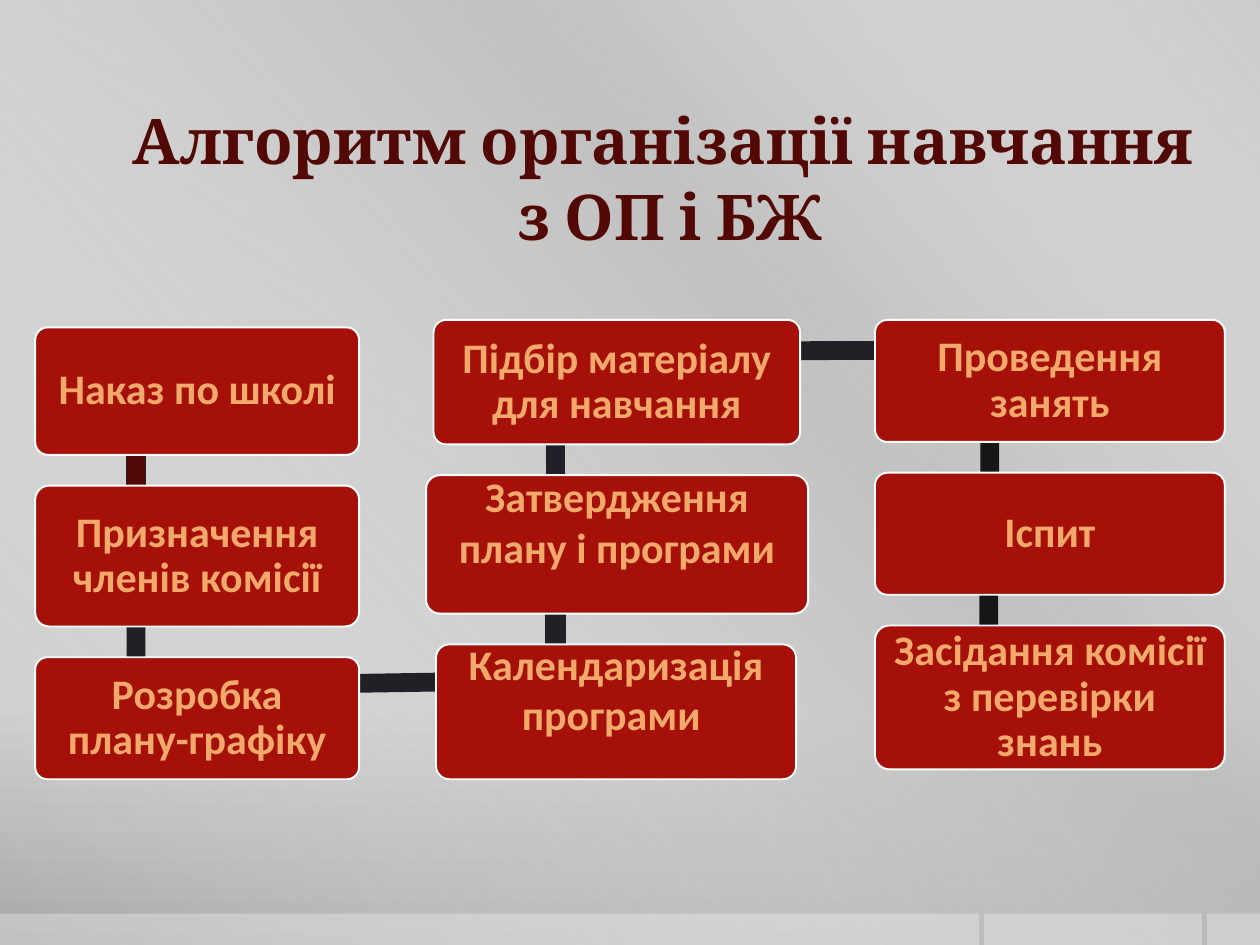
from lxml import etree
from pptx import Presentation
from pptx.dml.color import RGBColor
from pptx.enum.shapes import MSO_SHAPE as SHAPE
from pptx.enum.text import MSO_ANCHOR as ANCHOR, PP_ALIGN as ALIGN
from pptx.oxml.ns import qn
from pptx.util import Cm, Pt

WHITE = RGBColor(0xFF, 0xFF, 0xFF)
RED = RGBColor(0xA5, 0x10, 0x09)
MAROON = RGBColor(0x52, 0x08, 0x04)
PEACH = RGBColor(0xF2, 0xA9, 0x6B)
SLATE = RGBColor(0x20, 0x20, 0x26)
BLACK = RGBColor(0x16, 0x16, 0x16)
LIGHT = RGBColor(0xCB, 0xCB, 0xCB)
PALE = RGBColor(0xC8, 0xC8, 0xC8)
GREY = RGBColor(0xA7, 0xA7, 0xA7)
SILVER = RGBColor(0xBF, 0xBF, 0xBF)


def blend(fill, root, angle, stops):
    """Give fill a linear gradient of (percent, colour, opacity) stops."""
    fill.gradient()
    grad = next(root.iter(qn("a:gradFill")))
    group = grad.find(qn("a:gsLst"))
    for old in list(group):
        group.remove(old)
    for pos, color, alpha in stops:
        stop = etree.SubElement(group, qn("a:gs"), pos=str(pos * 1000))
        tone = etree.SubElement(stop, qn("a:srgbClr"), val=str(color))
        etree.SubElement(tone, qn("a:alpha"), val=str(alpha * 1000))
    grad.find(qn("a:lin")).set("ang", str(angle * 60000))


def draw(kind, left, top, width, height, color=None, edge=None, weight=0.75):
    shape = slide.shapes.add_shape(kind, Cm(left), Cm(top), Cm(width), Cm(height))
    shape.shadow.inherit = False
    if color is not None:
        shape.fill.solid()
        shape.fill.fore_color.rgb = color
    if edge is None:
        shape.line.fill.background()
    else:
        shape.line.color.rgb = edge
        shape.line.width = Pt(weight)
    return shape


deck = Presentation()
deck.slide_width, deck.slide_height = Cm(25.4), Cm(19.05)
slide = deck.slides.add_slide(deck.slide_layouts[6])

# Backdrop
blend(slide.background.fill, slide.element, 90,
      [(0, LIGHT, 100), (76, PALE, 100), (100, GREY, 100)])
sheen = draw(SHAPE.RECTANGLE, 0, 0, 25.4, 19.05)
blend(sheen.fill, sheen.element, 140,
      [(0, WHITE, 0), (34, SILVER, 61), (38, SILVER, 76), (100, WHITE, 0)])
for left, width in [(24.33, 1.07), (19.84, 4.39), (0, 19.74)]:
    strip = draw(SHAPE.RECTANGLE, left, 18.42, width, 0.63, WHITE)
    tone = next(strip.element.iter(qn("a:srgbClr")))
    etree.SubElement(tone, qn("a:alpha"), val="30000")

# Links behind the steps: centre x, centre y, length, rotation, fill, outline
links = [
    (2.74, 8.93, 3.3, 90, MAROON, SLATE),
    (2.74, 12.23, 3.25, 90, SLATE, None),
    (6.99, 13.78, 8.43, 359.1, SLATE, None),
    (11.2, 12.03, 3.35, 270, SLATE, SLATE),
    (11.2, 8.72, 3.25, 270, SLATE, None),
    (15.57, 7.07, 8.69, 359.9, SLATE, None),
    (19.95, 8.6, 3.07, 90, BLACK, None),
    (19.93, 11.8, 3.28, 90, BLACK, None),
]
THICK = 0.38
for x, y, length, turn, color, edge in links:
    bar = draw(SHAPE.RECTANGLE, x - length / 2, y - THICK / 2, length, THICK, color, edge)
    bar.rotation = turn

# Steps by column, top down: left, width, height, wording, text set high
GAP = 0.62
columns = [
    (6.6, [(0.71, 6.53, 2.57, "Наказ по школі", False),
           (0.71, 6.53, 2.84, "Призначення членів комісії", False),
           (0.71, 6.53, 2.46, "Розробка плану-графіку", False)]),
    (6.45, [(8.74, 7.39, 2.51, "Підбір матеріалу для навчання", False),
            (8.59, 7.7, 2.79, "Затвердження плану і програми", True),
            (8.79, 7.26, 2.72, "Календаризація програми ", True)]),
    (6.45, [(17.64, 7.05, 2.46, "Проведення занять", False),
            (17.64, 7.05, 2.46, "Іспит", False),
            (17.64, 7.05, 2.9, "Засідання комісії з перевірки знань", False)]),
]
for top, steps in columns:
    for left, width, height, words, high in steps:
        step = draw(SHAPE.ROUNDED_RECTANGLE, left, top, width, height, RED, WHITE, 1.1)
        step.adjustments[0] = 0.1
        frame = step.text_frame
        frame.word_wrap = True
        frame.vertical_anchor = ANCHOR.MIDDLE
        frame.margin_left = frame.margin_right = frame.margin_top = Cm(0.25)
        frame.margin_bottom = Cm(1.19 if high else 0.25)
        para = frame.paragraphs[0]
        para.alignment = ALIGN.CENTER
        para.line_spacing = 1.0 if high else 0.9
        run = para.add_run()
        run.text = words
        run.font.name, run.font.size, run.font.bold = "Calibri", Pt(24), True
        run.font.color.rgb = PEACH
        top += height + GAP

# Title
title = slide.shapes.add_textbox(Cm(1.3), Cm(1.93), Cm(24.41), Cm(3.33))
frame = title.text_frame
frame.word_wrap = True
for i, words in enumerate(["Алгоритм організації навчання ", "з ОП і БЖ"]):
    para = frame.add_paragraph() if i else frame.paragraphs[0]
    para.alignment = ALIGN.CENTER
    run = para.add_run()
    run.text = words
    run.font.name, run.font.size, run.font.bold = "Cambria", Pt(36), True
    run.font.color.rgb = MAROON

deck.save("out.pptx")
